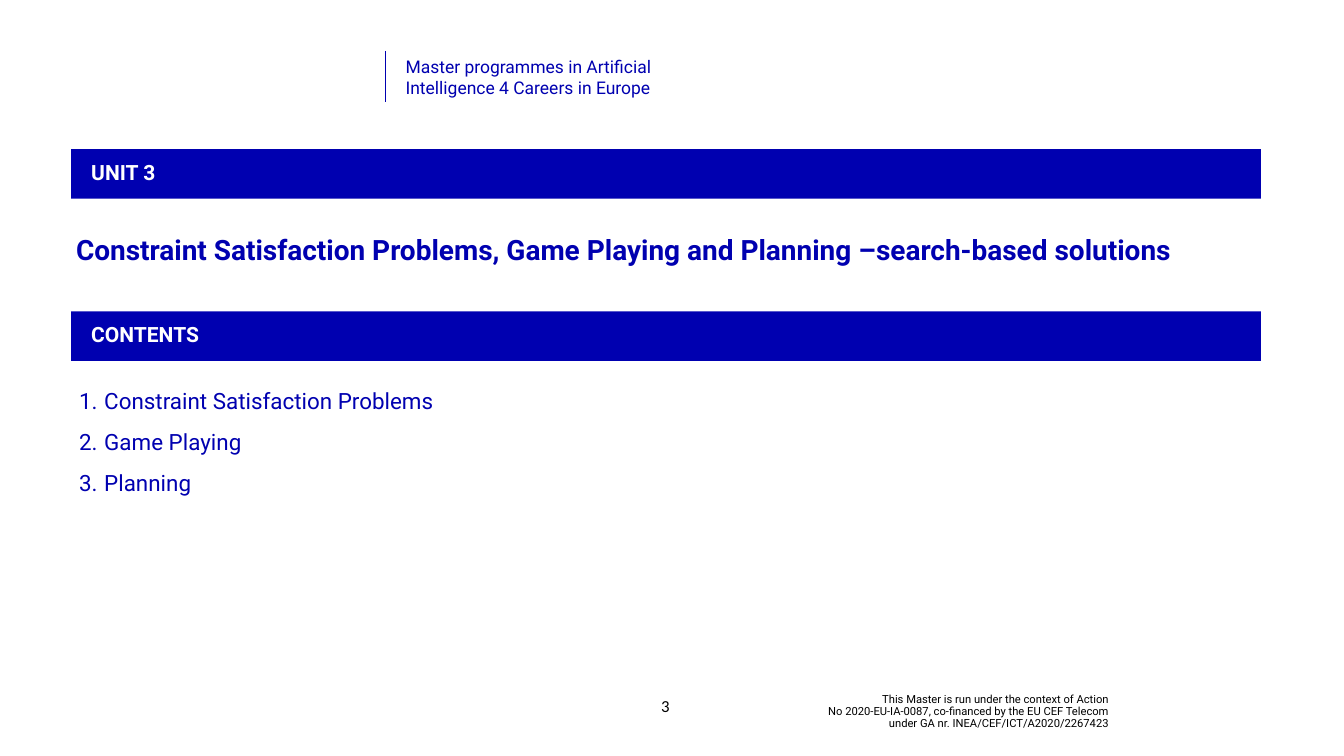
import copy
from dataclasses import dataclass

import pptx
import pptx.dml.color
import pptx.enum.shapes
import pptx.enum.text
import pptx.oxml
import pptx.oxml.ns
import pptx.util

Inches = pptx.util.Inches
Pt = pptx.util.Pt
Align = pptx.enum.text.PP_ALIGN
Anchor = pptx.enum.text.MSO_ANCHOR
qn = pptx.oxml.ns.qn

COLORS = {"blue": "0000B0", "white": "FFFFFF", "black": "000000"}
MARGIN_LEFT = 1.41
CONTENT_WIDTH = 23.61


@dataclass
class Box:
    left: float
    top: float
    width: float
    height: float

    def lengths(self) -> list:
        return [Inches(n) for n in (self.left, self.top, self.width, self.height)]


@dataclass
class Banner:
    label: str
    top: float


BANNERS = [Banner("UNIT 3", 2.96), Banner("CONTENTS", 6.18)]
CONTENTS = ["Constraint Satisfaction Problems", "Game Playing", "Planning"]


def color(name: str) -> pptx.dml.color.RGBColor:
    return pptx.dml.color.RGBColor.from_string(COLORS[name])


def write_text(shape, text, *, size, color_name="blue", font="Roboto", bold=False,
               align=Align.LEFT, anchor=Anchor.TOP, line_spacing=1.0):
    """Fill a shape with one paragraph; a newline becomes a line break."""
    frame = shape.text_frame
    frame.word_wrap = True
    frame.vertical_anchor = anchor
    add_paragraph(frame.paragraphs[0], text, size, color_name, font, bold)
    frame.paragraphs[0].alignment = align
    frame.paragraphs[0].line_spacing = line_spacing


def add_paragraph(paragraph, text: str, size: float, color_name: str = "blue",
                  font: str = "Roboto", bold: bool = False) -> None:
    paragraph.text = text
    for run in paragraph.runs:
        run.font.name = font
        run.font.size = Pt(size)
        run.font.bold = bold
        run.font.color.rgb = color(color_name)
    # Line breaks take the format of the text around them
    for line_break in paragraph._p.findall(qn("a:br")):
        line_break.insert(0, copy.deepcopy(paragraph.runs[0]._r.rPr))


def add_text(slide, box: Box, text: str, **text_format) -> None:
    write_text(slide.shapes.add_textbox(*box.lengths()), text, **text_format)


def add_banner(slide, banner: Banner) -> None:
    box = Box(MARGIN_LEFT, banner.top, CONTENT_WIDTH, 0.98)
    shape = slide.shapes.add_shape(
        pptx.enum.shapes.MSO_SHAPE.RECTANGLE, *box.lengths())
    shape.shadow.inherit = False
    shape.fill.solid()
    shape.fill.fore_color.rgb = color("blue")
    shape.line.fill.background()
    shape.text_frame.margin_left = Inches(0.4)
    write_text(shape, banner.label, size=30, color_name="white", bold=True,
               anchor=Anchor.MIDDLE, line_spacing=0.9)


def add_numbered_list(slide, box: Box, items: list[str]) -> None:
    frame = slide.shapes.add_textbox(*box.lengths()).text_frame
    frame.word_wrap = True
    for index, item in enumerate(items):
        paragraph = frame.add_paragraph() if index else frame.paragraphs[0]
        properties = paragraph._p.get_or_add_pPr()
        properties.set("marL", str(Inches(0.5)))
        properties.set("indent", str(-Inches(0.5)))
        numbering = pptx.oxml.parse_xml(
            f'<a:buAutoNum {pptx.oxml.ns.nsdecls("a")} type="arabicPeriod"/>')
        properties.append(numbering)
        if index:
            paragraph.space_before = Pt(20)
        add_paragraph(paragraph, item, 32)


def add_divider(slide, x: float, top: float, bottom: float) -> None:
    line = slide.shapes.add_connector(
        pptx.enum.shapes.MSO_CONNECTOR.STRAIGHT,
        Inches(x), Inches(top), Inches(x), Inches(bottom))
    line.line.color.rgb = color("blue")
    line.line.width = Pt(0.5)
    line._element.spPr.append(pptx.oxml.parse_xml(
        f'<a:effectLst {pptx.oxml.ns.nsdecls("a")}/>'))


def main() -> None:
    presentation = pptx.Presentation()
    presentation.slide_width = Inches(26.67)
    presentation.slide_height = Inches(15)
    slide = presentation.slides.add_slide(presentation.slide_layouts[6])

    # Header
    add_divider(slide, 7.65, 1.01, 2.03)
    add_text(slide, Box(7.95, 1.06, 6.37, 0.94),
             "Master programmes in Artificial\nIntelligence 4 Careers in Europe", size=25)

    # Unit title and contents
    for banner in BANNERS:
        add_banner(slide, banner)
    add_text(slide, Box(MARGIN_LEFT, 4.26, CONTENT_WIDTH, 1.3),
             "Constraint Satisfaction Problems, Game Playing and Planning "
             "–search-based solutions",
             size=40, bold=True, line_spacing=Pt(70))
    add_numbered_list(slide, Box(1.47, 7.64, 23.47, 2.53), CONTENTS)

    # Footer
    add_text(slide, Box(12.65, 13.61, 1.11, 0.8), "3", size=24, font="Calibri",
             color_name="black", align=Align.CENTER, anchor=Anchor.MIDDLE)
    add_text(slide, Box(15.02, 13.74, 7.08, 0.76),
             "This Master is run under the context of Action\n"
             "No 2020-EU-IA-0087, co-financed by the EU CEF Telecom\n"
             "under GA nr. INEA/CEF/ICT/A2020/2267423",
             size=16, color_name="black", align=Align.RIGHT,
             anchor=Anchor.MIDDLE, line_spacing=0.9)

    presentation.save("out.pptx")


if __name__ == "__main__":
    main()
